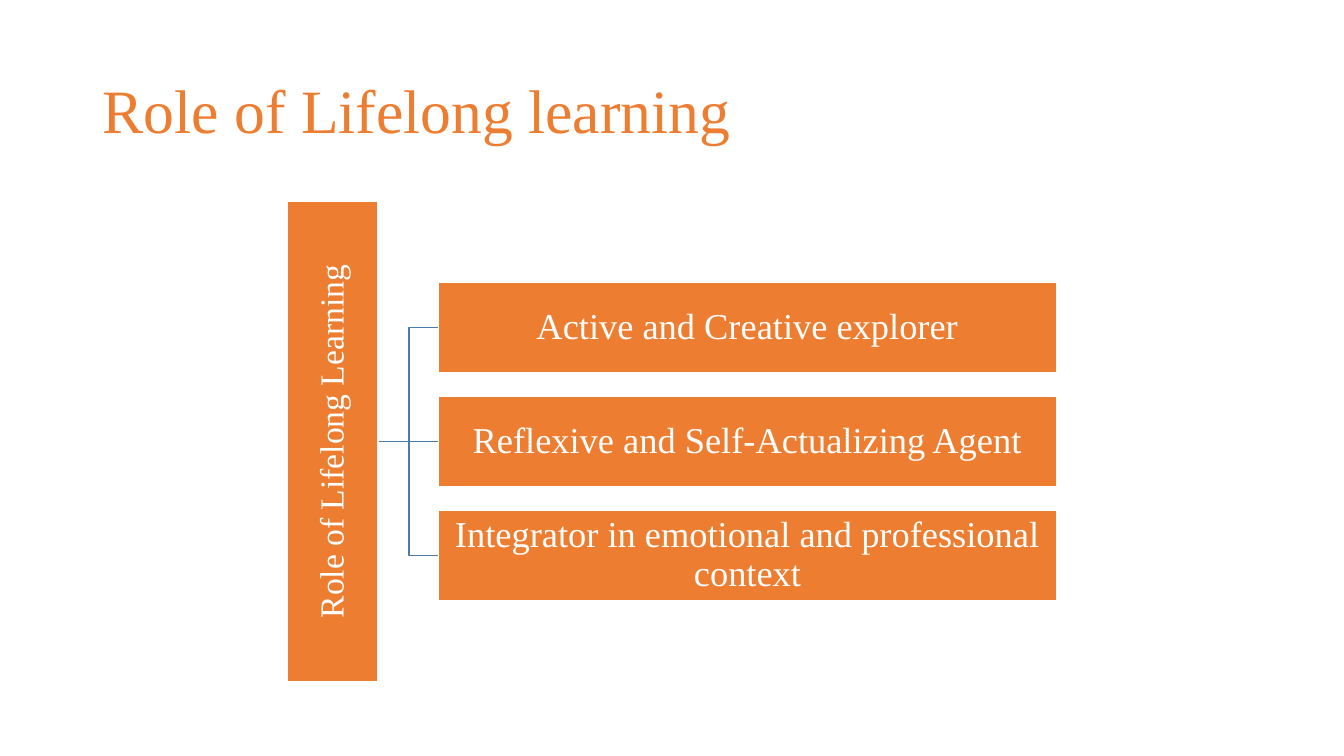
from pptx import Presentation
from pptx.dml.color import RGBColor
from pptx.enum.shapes import MSO_CONNECTOR, MSO_SHAPE
from pptx.enum.text import MSO_ANCHOR, MSO_AUTO_SIZE, PP_ALIGN
from pptx.oxml.ns import qn
from pptx.util import Inches, Pt
from lxml.etree import SubElement

TITLE = "Role of Lifelong learning"
ROOT = "Role of Lifelong Learning"
ROLES = [
    "Active and Creative explorer",
    "Reflexive and Self-Actualizing Agent",
    "Integrator in emotional and professional context",
]

THEME = {
    "font": "Times New Roman",
    "orange": RGBColor(0xED, 0x7D, 0x31),
    "white": RGBColor(0xFF, 0xFF, 0xFF),
    "blue": RGBColor(0x49, 0x7C, 0xAB),
    "title_size": Pt(44),
    "root_size": Pt(24),
    "role_size": Pt(26),
    "line_width": Pt(1),
}

TITLE_BOX = (0.92, 0.4, 9.5, 1.45)
CENTER_Y = 4.38
BAR_HEIGHT = 0.9
ROOT_LENGTH = 4.76
ROOT_CENTER_X = 3.3
ROOT_RIGHT = 3.76
ROLE_LEFT = 4.35
ROLE_WIDTH = 6.13
ROLE_PITCH = 1.13
INSET = 0.02


def set_all(target, values):
    for name, value in values.items():
        setattr(target, name, value)


def write(shape, text, size, color, alignment, inset=None):
    frame = shape.text_frame
    frame.text = text
    set_all(frame, {
        "word_wrap": True,
        "auto_size": MSO_AUTO_SIZE.NONE,
        "vertical_anchor": MSO_ANCHOR.MIDDLE,
    })
    if inset is not None:
        sides = ("left", "top", "right", "bottom")
        set_all(frame, {f"margin_{side}": Inches(inset) for side in sides})
    paragraph = frame.paragraphs[0]
    set_all(paragraph, {"alignment": alignment, "line_spacing": 0.9, "space_before": Pt(0)})
    set_all(paragraph.font, {"name": THEME["font"], "size": size})
    paragraph.font.color.rgb = color


def add_bar(slide, text, center_x, center_y, width, size, rotation=0):
    bar = slide.shapes.add_shape(
        MSO_SHAPE.RECTANGLE,
        Inches(center_x - width / 2), Inches(center_y - BAR_HEIGHT / 2),
        Inches(width), Inches(BAR_HEIGHT),
    )
    bar.rotation = rotation
    bar.shadow.inherit = False
    bar.fill.solid()
    bar.fill.fore_color.rgb = THEME["orange"]
    bar.line.color.rgb = THEME["white"]
    bar.line.width = THEME["line_width"]
    write(bar, text, size, THEME["white"], PP_ALIGN.CENTER, INSET)


def add_branch(slide, role_y):
    kind = MSO_CONNECTOR.STRAIGHT if role_y == CENTER_Y else MSO_CONNECTOR.ELBOW
    branch = slide.shapes.add_connector(
        kind, Inches(ROOT_RIGHT), Inches(CENTER_Y), Inches(ROLE_LEFT), Inches(role_y)
    )
    branch.line.color.rgb = THEME["blue"]
    branch.line.width = THEME["line_width"]
    SubElement(branch._element.spPr, qn("a:effectLst"))


def main():
    presentation = Presentation()
    set_all(presentation, {"slide_width": Inches(13.33), "slide_height": Inches(7.5)})
    slide = presentation.slides.add_slide(presentation.slide_layouts[5])

    title = slide.shapes.title
    edges = ("left", "top", "width", "height")
    set_all(title, {edge: Inches(value) for edge, value in zip(edges, TITLE_BOX)})
    write(title, TITLE, THEME["title_size"], THEME["orange"], PP_ALIGN.LEFT)

    middle = (len(ROLES) - 1) / 2
    role_rows = [CENTER_Y + (index - middle) * ROLE_PITCH for index in range(len(ROLES))]
    for role_y in role_rows:
        add_branch(slide, role_y)
    add_bar(slide, ROOT, ROOT_CENTER_X, CENTER_Y, ROOT_LENGTH, THEME["root_size"], 270)
    for role, role_y in zip(ROLES, role_rows):
        add_bar(slide, role, ROLE_LEFT + ROLE_WIDTH / 2, role_y, ROLE_WIDTH, THEME["role_size"])

    presentation.save("out.pptx")


if __name__ == "__main__":
    main()
